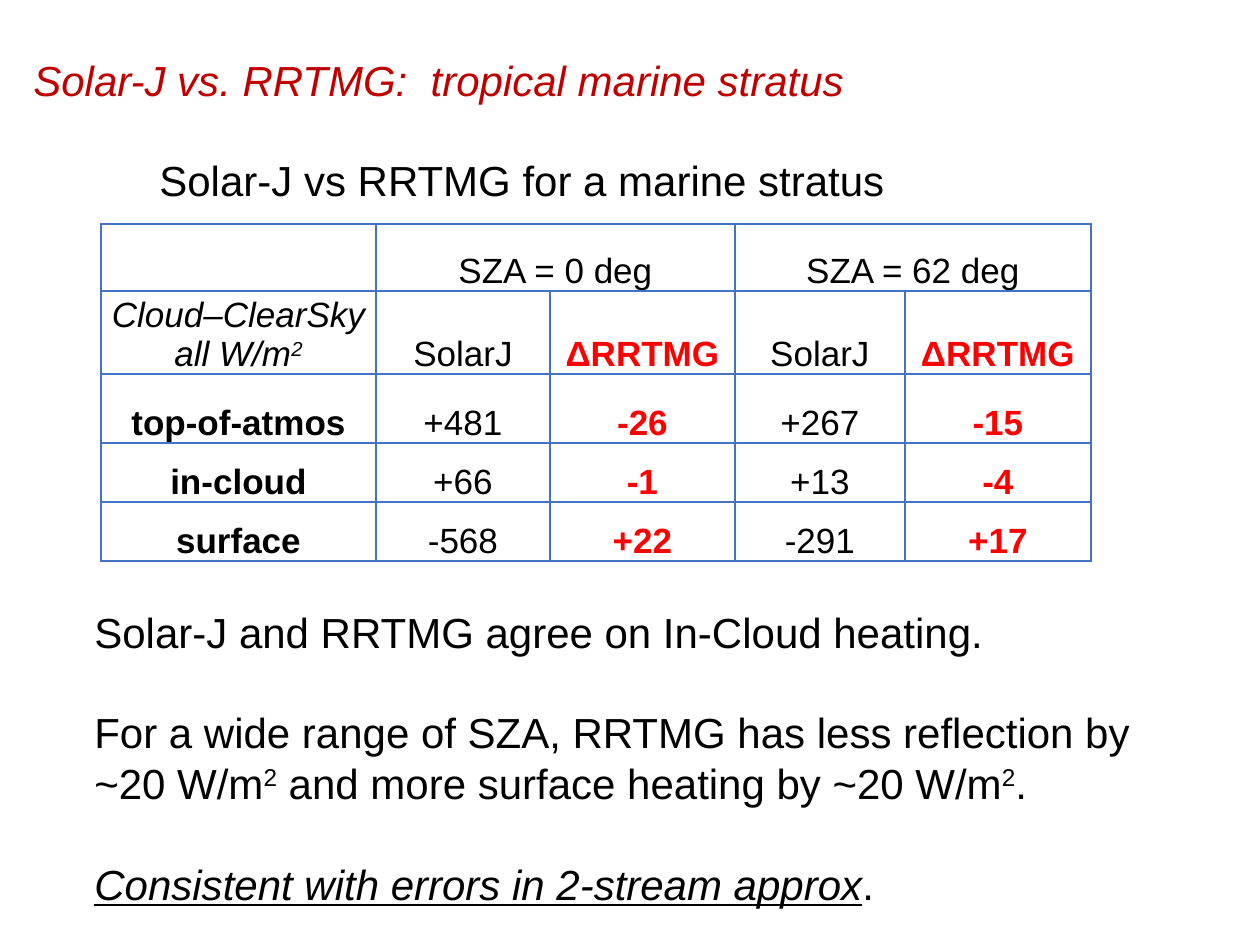
import lxml.etree
import pptx
import pptx.dml.color
import pptx.enum.text
import pptx.oxml.ns
import pptx.util

PX = 914400 // 126
FONT = "Arial"
COLOURS = {"title": "C00000", "text": "000000", "delta": "FF0000", "border": "4472C4"}
LINE = pptx.util.Pt(28.8)

COLUMNS = [275, 174, 185, 170, 186]
ROWS = [67, 83, 69, 59, 59]
HEADINGS = ["SolarJ", "ΔRRTMG"] * 2
RESULTS = [
    ["top-of-atmos", "+481", "-26", "+267", "-15"],
    ["in-cloud", "+66", "-1", "+13", "-4"],
    ["surface", "-568", "+22", "-291", "+17"],
]


def px(length):
    return pptx.util.Emu(length * PX)


def add_span(para, text, size, colour="text", bold=False, italic=False,
             underline=False, raised=False):
    span = para.add_run()
    span.text = text
    font = span.font
    font.name, font.size = FONT, pptx.util.Pt(size)
    font.bold, font.italic, font.underline = bold, italic, underline
    font.color.rgb = pptx.dml.color.RGBColor.from_string(COLOURS[colour])
    if raised:
        span._r.get_or_add_rPr().set("baseline", "30000")


def add_text(page, left, top, width, height, paragraphs):
    """Each paragraph is (indent, spans); a span is (text, style).
    One empty line's height separates paragraphs."""
    box = page.shapes.add_textbox(px(left), px(top), px(width), px(height))
    frame = box.text_frame
    frame.word_wrap = True
    for number, (indent, spans) in enumerate(paragraphs):
        para = frame.add_paragraph() if number else frame.paragraphs[0]
        para.line_spacing = LINE
        if number:
            para.space_before = LINE
        if indent:
            para._p.get_or_add_pPr().set("marL", str(px(indent)))
        for text, style in spans:
            add_span(para, text, 24, **style)


def add_borders(cell):
    properties = cell._tc.get_or_add_tcPr()
    qn = pptx.oxml.ns.qn
    for position, side in enumerate(("a:lnL", "a:lnR", "a:lnT", "a:lnB")):
        line = lxml.etree.Element(qn(side), w=str(pptx.util.Pt(1)))
        fill = lxml.etree.SubElement(line, qn("a:solidFill"))
        lxml.etree.SubElement(fill, qn("a:srgbClr"), val=COLOURS["border"])
        properties.insert(position, line)


def fill_cell(cell, spans):
    para = cell.text_frame.paragraphs[0]
    para.alignment = pptx.enum.text.PP_ALIGN.CENTER
    for text, style in spans:
        add_span(para, text, 20, **style)


def add_results_table(page):
    table = page.shapes.add_table(len(ROWS), len(COLUMNS), px(101), px(224),
                                  px(sum(COLUMNS)), px(sum(ROWS))).table
    table.first_row = table.horz_banding = False
    for column, width in zip(table.columns, COLUMNS):
        column.width = px(width)
    for row, height in zip(table.rows, ROWS):
        row.height = px(height)
    for cell in table.iter_cells():
        cell.margin_left = cell.margin_right = cell.margin_top = cell.margin_bottom = 0
        cell.vertical_anchor = pptx.enum.text.MSO_ANCHOR.BOTTOM
        cell.fill.background()
        add_borders(cell)

    for column, angle in ((1, "0"), (3, "62")):
        table.cell(0, column).merge(table.cell(0, column + 1))
        fill_cell(table.cell(0, column), [(f"SZA = {angle} deg", {})])

    italic = {"italic": True}
    fill_cell(table.cell(1, 0), [("Cloud–ClearSky all W/m", italic),
                                 ("2", {"italic": True, "raised": True})])
    delta = {"colour": "delta", "bold": True}
    styles = [{"bold": True}, {}, delta, {}, delta]
    for column, heading in enumerate(HEADINGS, 1):
        fill_cell(table.cell(1, column), [(heading, styles[column])])
    for row, values in enumerate(RESULTS, 2):
        for column, value in enumerate(values):
            fill_cell(table.cell(row, column), [(value, styles[column])])


def main():
    deck = pptx.Presentation()
    deck.slide_width, deck.slide_height = px(1260), px(945)
    page = deck.slides.add_slide(deck.slide_layouts[6])

    add_results_table(page)
    add_text(page, 21, 48, 985, 165, [
        (0, [("Solar-J vs. RRTMG:  tropical marine stratus",
              {"colour": "title", "italic": True})]),
        (126, [("Solar-J vs RRTMG for a marine stratus", {})]),
    ])
    square = ("2", {"raised": True})
    add_text(page, 82, 600, 1114, 318, [
        (0, [("Solar-J and RRTMG agree on In-Cloud heating.", {})]),
        (0, [("For a wide range of SZA, RRTMG has less reflection by ~20 W/m", {}),
             square, (" and more surface heating by ~20 W/m", {}), square, (".", {})]),
        (0, [("Consistent with errors in 2-stream approx",
              {"italic": True, "underline": True}), (".", {})]),
    ])
    deck.save("out.pptx")


if __name__ == "__main__":
    main()
